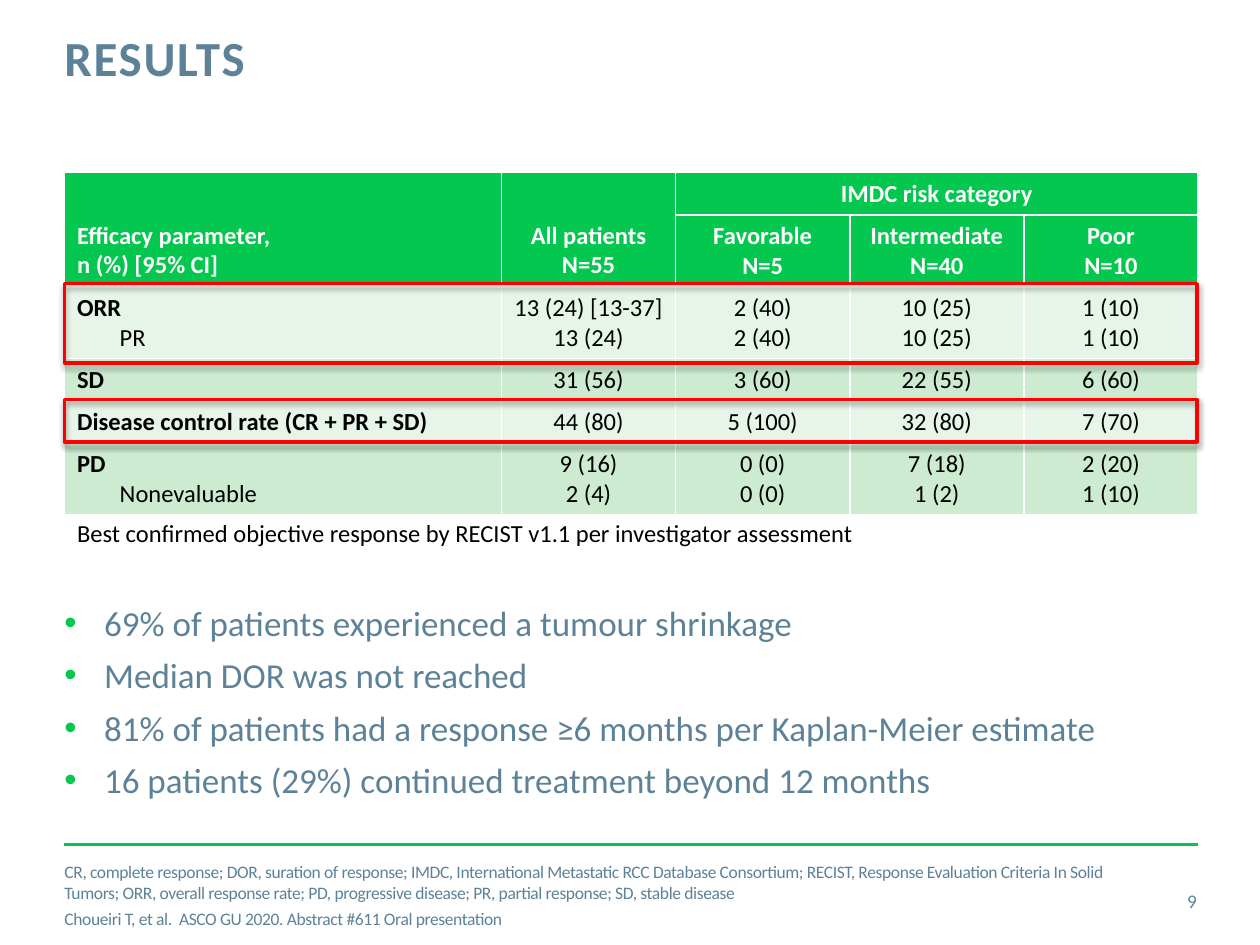
from lxml.etree import SubElement
from pptx import Presentation
from pptx.dml.color import RGBColor
from pptx.enum.shapes import MSO_CONNECTOR, MSO_SHAPE
from pptx.enum.text import MSO_ANCHOR, PP_ALIGN
from pptx.oxml.ns import qn
from pptx.util import Cm, Pt

GREEN, SLATE, WHITE, RED = "03C74F", "5D8298", "FFFFFF", "FF0000"
LIGHT, MID = "E7F5E9", "CCEBD0"


def color(code):
    return RGBColor.from_string(code)


def add_text(x, y, w, h, lines, size, gap=0, mark=False, spacing=0):
    frame = slide.shapes.add_textbox(Cm(x), Cm(y), Cm(w), Cm(h)).text_frame
    frame.word_wrap = True
    frame.margin_left = frame.margin_right = 0
    frame.margin_top = frame.margin_bottom = 0
    for i, line in enumerate(lines):
        par = frame.paragraphs[0] if i == 0 else frame.add_paragraph()
        par.text = line
        if i:
            par.space_before = Pt(gap)
        if mark:
            props = par._p.get_or_add_pPr()
            props.set("marL", str(Cm(0.8)))
            props.set("indent", str(-Cm(0.8)))
            tint = SubElement(props, qn("a:buClr"))
            SubElement(tint, qn("a:srgbClr"), val=GREEN)
            SubElement(props, qn("a:buFont"), typeface="Arial")
            SubElement(props, qn("a:buChar"), char="•")
        par.font.name = "Calibri"
        par.font.size = Pt(size)
        par.font.color.rgb = color(SLATE)
        if spacing:
            par.font._rPr.set("spc", str(spacing))
    return frame


deck = Presentation()
deck.slide_width, deck.slide_height = Cm(25.4), Cm(19.05)
slide = deck.slides.add_slide(deck.slide_layouts[6])

rule = slide.shapes.add_connector(
    MSO_CONNECTOR.STRAIGHT, Cm(1.3), Cm(17.02), Cm(24.15), Cm(17.02))
rule.line.color.rgb = color(GREEN)
rule.line.width = Pt(2)
SubElement(rule._element.spPr, qn("a:effectLst"))

title = add_text(1.3, 0.69, 18.2, 2.24, ["RESULTS"], 28, spacing=100)
title.paragraphs[0].line_spacing = Pt(30)
title.paragraphs[0].font.bold = True

add_text(1.3, 12.12, 22.85, 4.42, [
    "69% of patients experienced a tumour shrinkage",
    "Median DOR was not reached",
    "81% of patients had a response ≥6 months per Kaplan-Meier estimate",
    "16 patients (29%) continued treatment beyond 12 months",
], 20, gap=6, mark=True)

notes = add_text(1.3, 17.27, 21.2, 1.55, [
    "CR, complete response; DOR, suration of response; IMDC, International "
    "Metastatic RCC Database Consortium; RECIST, Response Evaluation Criteria "
    "In Solid Tumors; ORR, overall response rate; PD, progressive disease; "
    "PR, partial response; SD, stable disease",
    "Choueiri T, et al.  ASCO GU 2020. Abstract #611 Oral presentation",
], 10, gap=3, spacing=-20)
notes.vertical_anchor = MSO_ANCHOR.MIDDLE

page = add_text(22.5, 17.65, 1.63, 1.02, ["9"], 11)
page.vertical_anchor = MSO_ANCHOR.MIDDLE
page.paragraphs[0].alignment = PP_ALIGN.RIGHT

rows = [
    ["Efficacy parameter, \vn (%) [95% CI]", "All patients\vN=55",
     "IMDC risk category", "", ""],
    ["", "", "Favorable\vN=5", "Intermediate\vN=40", "Poor\vN=10"],
    ["ORR\vPR", "13 (24) [13-37]\v13 (24)", "2 (40)\v2 (40)",
     "10 (25)\v10 (25)", "1 (10)\v1 (10)"],
    ["SD", "31 (56)", "3 (60)", "22 (55)", "6 (60)"],
    ["Disease control rate (CR + PR + SD)", "44 (80)", "5 (100)",
     "32 (80)", "7 (70)"],
    ["PD\vNonevaluable", "9 (16)\v2 (4)", "0 (0)\v0 (0)",
     "7 (18)\v1 (2)", "2 (20)\v1 (10)"],
    ["Best confirmed objective response by RECIST v1.1 per investigator "
     "assessment", "", "", "", ""],
]
fills = [GREEN, GREEN, LIGHT, MID, LIGHT, MID, None]
highs = [0.85, 1.45, 1.45, 0.85, 0.85, 1.45, 0.8]
wides = [8.81] + [3.51] * 4
last = len(rows) - 1

table = slide.shapes.add_table(
    len(rows), len(wides), Cm(1.3), Cm(3.48),
    Cm(sum(wides)), Cm(sum(highs))).table
table.first_row = table.horz_banding = False
for col, wide in zip(table.columns, wides):
    col.width = Cm(wide)
for row, high in zip(table.rows, highs):
    row.height = Cm(high)
for top, left, end, right in [(0, 0, 1, 0), (0, 1, 1, 1),
                              (0, 2, 0, 4), (last, 0, last, 4)]:
    table.cell(top, left).merge(table.cell(end, right))

for r, texts in enumerate(rows):
    for c, text in enumerate(texts):
        cell = table.cell(r, c)
        props = cell._tc.get_or_add_tcPr()
        for side in "LRTB":
            thick = (r, side) in [(1, "B"), (2, "T")]
            edge = SubElement(props, qn("a:ln" + side),
                              w=str(Pt(2.25 if thick else 1)))
            fill = SubElement(edge, qn("a:solidFill"))
            SubElement(fill, qn("a:srgbClr"), val=WHITE)
        if fills[r]:
            cell.fill.solid()
            cell.fill.fore_color.rgb = color(fills[r])
        else:
            cell.fill.background()
        if r > 1:
            cell.vertical_anchor = MSO_ANCHOR.MIDDLE
        elif r == 0 and c < 2:
            cell.vertical_anchor = MSO_ANCHOR.BOTTOM
        if not text:
            continue
        par = cell.text_frame.paragraphs[0]
        par.text = text
        if c or 0 < r < 2:
            par.alignment = PP_ALIGN.CENTER
        elif r > 1:
            indent = par._p.get_or_add_pPr()
            indent.set("marL", str(Cm(0.86)))
            indent.set("indent", str(-Cm(0.86)))
        if r == last:
            par.line_spacing = 0.9
        par.font.name = "Calibri"
        par.font.size = Pt(14)
        par.font.color.rgb = color(WHITE if r < 2 else "000000")
        par.font.bold = r < 2 or (c == 0 and r < last)
        if c == 0 and 1 < r < last:
            for run in par.runs[1:]:
                run.font.bold = False

for y, h in [(5.72, 1.6), (8.05, 0.86)]:
    box = slide.shapes.add_shape(
        MSO_SHAPE.RECTANGLE, Cm(1.3), Cm(y), Cm(22.83), Cm(h))
    box.fill.background()
    box.line.color.rgb = color(RED)
    box.line.width = Pt(2)
    box.shadow.inherit = False
    effect = box._element.spPr.find(qn("a:effectLst"))
    shade = SubElement(effect, qn("a:outerShdw"), blurRad=str(Pt(3.1)),
                       dist=str(Pt(1.8)), dir="5400000", rotWithShape="0")
    tint = SubElement(shade, qn("a:srgbClr"), val="000000")
    SubElement(tint, qn("a:alpha"), val="35000")

deck.save("out.pptx")
